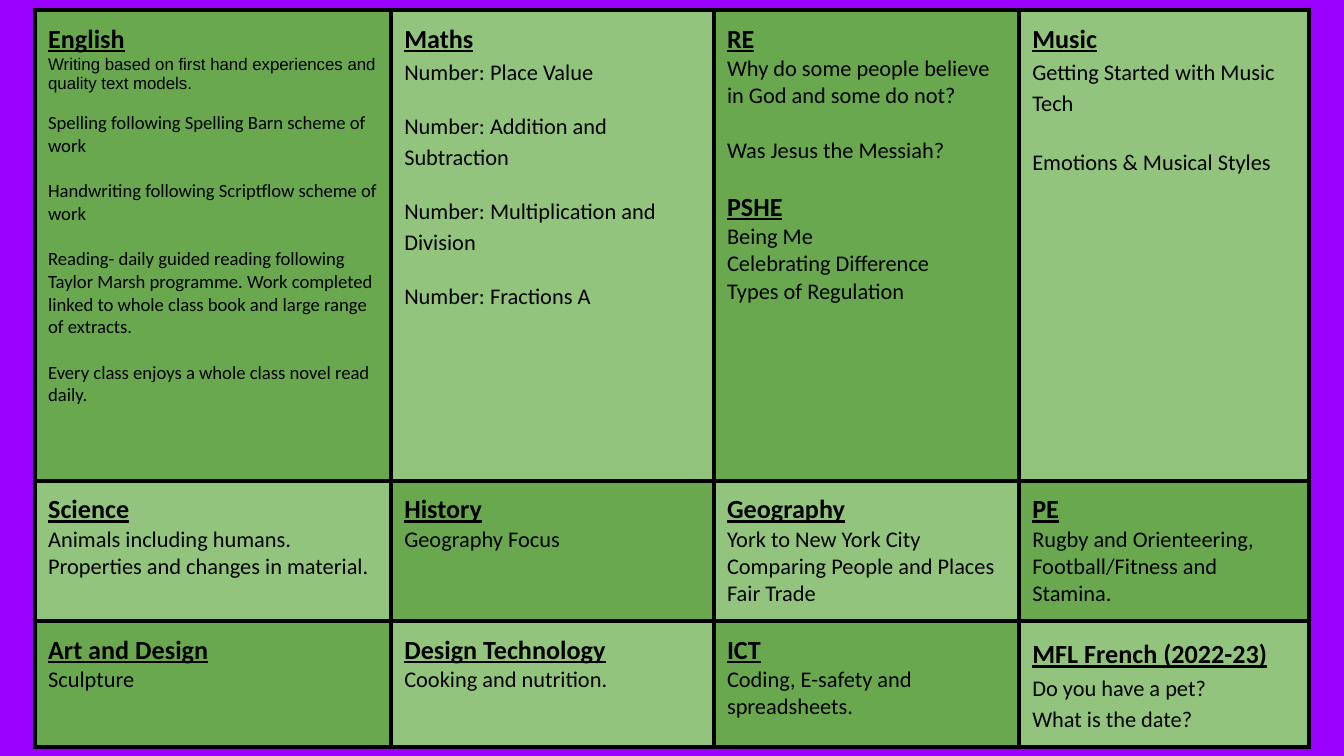
from lxml import etree
from pptx import Presentation
from pptx.dml.color import RGBColor
from pptx.oxml.ns import qn
from pptx.util import Cm, Pt

PURPLE = RGBColor(0x99, 0x00, 0xFF)
DARK_GREEN = RGBColor(0x6A, 0xA8, 0x4F)
LIGHT_GREEN = RGBColor(0x93, 0xC4, 0x7D)
BLACK = RGBColor(0x00, 0x00, 0x00)

# Paragraph styles: font, size, is heading, line spacing
HEAD = ("Calibri", 14, True, 1.0)
LOOSE_HEAD = ("Calibri", 14, True, 1.15)
BODY = ("Calibri", 12, False, 1.0)
LOOSE = ("Calibri", 12, False, 1.15)
SMALL = ("Calibri", 10, False, 1.0)
TINY = ("Arial", 9, False, 1.0)

# Each subject is a list of paragraphs: style, text, space before in points
SUBJECTS = [
    [
        [
            (HEAD, "English", 0),
            (TINY, "Writing based on first hand experiences and quality text models.", 0),
            (SMALL, "Spelling following Spelling Barn scheme of work", 10.4),
            (SMALL, "Handwriting following Scriptflow scheme of work", 12.2),
            (SMALL, "Reading- daily guided reading following Taylor Marsh programme. "
                    "Work completed linked to whole class book and large range of extracts.", 12.2),
            (SMALL, "Every class enjoys a whole class novel read daily.", 12.2),
        ],
        [
            (HEAD, "Maths", 0),
            (LOOSE, "Number: Place Value", 0),
            (LOOSE, "Number: Addition and Subtraction", 12),
            (LOOSE, "Number: Multiplication and Division", 12),
            (LOOSE, "Number: Fractions A", 12),
        ],
        [
            (HEAD, "RE", 0),
            (BODY, "Why do some people believe in God and some do not?", 0),
            (BODY, "Was Jesus the Messiah?", 14.6),
            (HEAD, "PSHE", 14.6),
            (BODY, "Being Me", 0),
            (BODY, "Celebrating Difference", 0),
            (BODY, "Types of Regulation", 0),
        ],
        [
            (HEAD, "Music", 0),
            (LOOSE, "Getting Started with Music Tech", 0),
            (LOOSE, "Emotions & Musical Styles", 14.6),
        ],
    ],
    [
        [
            (HEAD, "Science", 0),
            (BODY, "Animals including humans.", 0),
            (BODY, "Properties and changes in material.", 0),
        ],
        [(HEAD, "History", 0), (BODY, "Geography Focus", 0)],
        [
            (HEAD, "Geography", 0),
            (BODY, "York to New York City", 0),
            (BODY, "Comparing People and Places", 0),
            (BODY, "Fair Trade", 0),
        ],
        [
            (HEAD, "PE", 0),
            (BODY, "Rugby and Orienteering, Football/Fitness and Stamina.", 0),
        ],
    ],
    [
        [(HEAD, "Art and Design", 0), (BODY, "Sculpture", 0)],
        [(HEAD, "Design Technology", 0), (BODY, "Cooking and nutrition.", 0)],
        [(HEAD, "ICT", 0), (BODY, "Coding, E-safety and spreadsheets.", 0)],
        [
            (LOOSE_HEAD, "MFL French (2022-23)", 0),
            (LOOSE, "Do you have a pet?", 0),
            (LOOSE, "What is the date?", 0),
        ],
    ],
]
COL_WIDTHS = [Cm(6.73), Cm(6.1), Cm(5.77), Cm(5.48)]
ROW_HEIGHTS = [Cm(8.9), Cm(2.11), Cm(1.85)]
MARGIN = Cm(0.25)


def add_borders(cell, color, width):
    """Draw all four cell borders; call before setting the cell's fill."""
    tcPr = cell._tc.get_or_add_tcPr()
    for side in ("lnL", "lnR", "lnT", "lnB"):
        ln = etree.SubElement(tcPr, qn(f"a:{side}"), w=str(width))
        fill = etree.SubElement(ln, qn("a:solidFill"))
        etree.SubElement(fill, qn("a:srgbClr"), val=str(color))


def write_paragraphs(tf, paragraphs):
    for i, (style, text, gap) in enumerate(paragraphs):
        p = tf.paragraphs[0] if i == 0 else tf.add_paragraph()
        p.text = text
        font, size, heading, spacing = style
        p.line_spacing = spacing
        p.space_before = Pt(gap)
        p.font.name = font
        p.font.size = Pt(size)
        p.font.bold = p.font.underline = heading
        p.font.color.rgb = BLACK


prs = Presentation()
prs.slide_width, prs.slide_height = Cm(25.4), Cm(14.29)
s = prs.slides.add_slide(prs.slide_layouts[6])
s.background.fill.solid()
s.background.fill.fore_color.rgb = PURPLE

table = s.shapes.add_table(
    len(ROW_HEIGHTS), len(COL_WIDTHS), Cm(0.66), Cm(0.19),
    sum(COL_WIDTHS), sum(ROW_HEIGHTS)).table
table.first_row = table.horz_banding = False
for col, width in zip(table.columns, COL_WIDTHS):
    col.width = width
for row, height in zip(table.rows, ROW_HEIGHTS):
    row.height = height

for r, row in enumerate(SUBJECTS):
    for c, paragraphs in enumerate(row):
        cell = table.cell(r, c)
        cell.margin_left = cell.margin_right = MARGIN
        cell.margin_top = cell.margin_bottom = MARGIN
        add_borders(cell, BLACK, Pt(2.25))
        cell.fill.solid()
        cell.fill.fore_color.rgb = LIGHT_GREEN if (r + c) % 2 else DARK_GREEN
        write_paragraphs(cell.text_frame, paragraphs)

prs.save("out.pptx")
